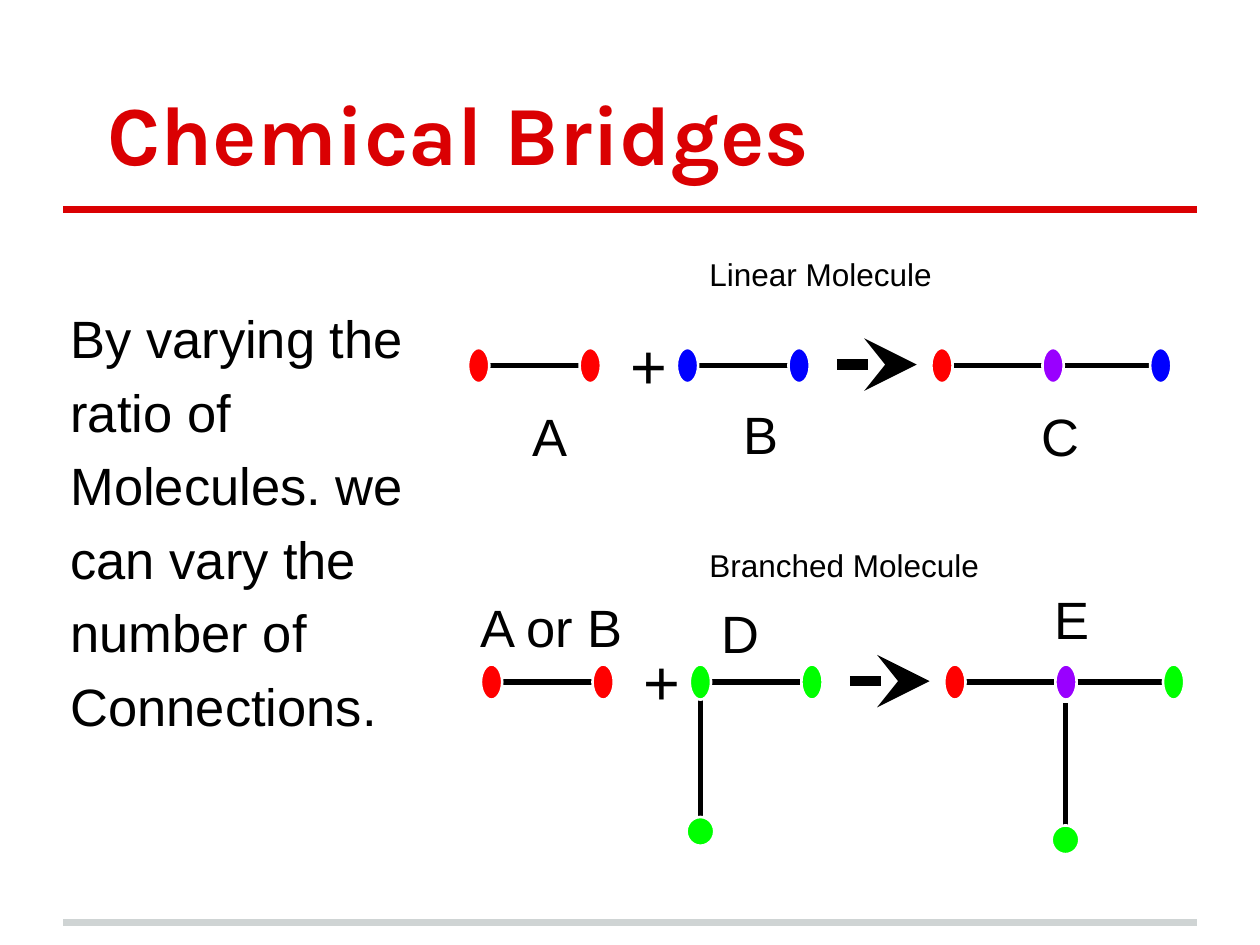
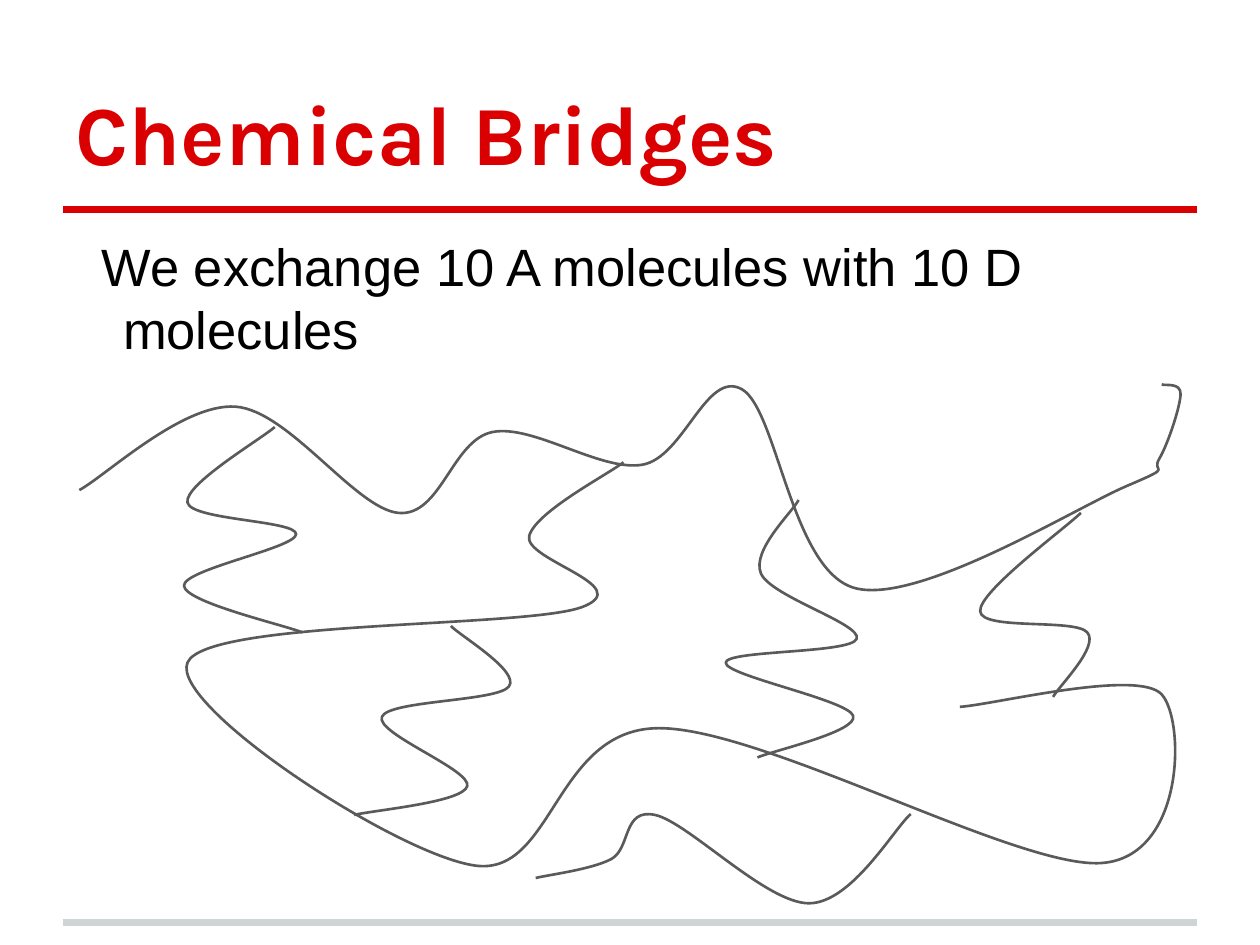
from itertools import pairwise

from lxml import etree
from pptx import Presentation
from pptx import util as u
from pptx.dml.color import RGBColor
from pptx.enum import shapes, text
from pptx.oxml.ns import qn

Cm, Pt = u.Cm, u.Pt

COLORS = {
    "title": "DA0002", "footer": "CFD4D4", "ink": "000000", "strand": "5B595A",
    "white": "FFFFFF", "red": "FF0000", "blue": "0000FF", "green": "00FF00",
    "purple": "9900FF",
}
TITLE_FONT = {"name": "Karla", "size": Pt(48), "bold": True}
BODY_FONT = {"name": "Arial", "size": Pt(30), "bold": False}
CAPTION_FONT = BODY_FONT | {"size": Pt(18)}
PLUS_FONT = BODY_FONT | {"size": Pt(36)}
TITLE_FRAME = {"vertical_anchor": text.MSO_ANCHOR.BOTTOM}
TOP_FRAME = {"vertical_anchor": text.MSO_ANCHOR.TOP}
MIDDLE_FRAME = {"vertical_anchor": text.MSO_ANCHOR.MIDDLE}
LEFT = {"alignment": text.PP_ALIGN.LEFT}
CENTER = {"alignment": text.PP_ALIGN.CENTER}
BODY_PARAGRAPH = LEFT | {"line_spacing": 1.0, "space_before": Pt(6)}

TITLE_BOX = (1.27, 0.75, 22.86, 3.17)
LETTER_SIZE = (0.43, 1.07)
ATOM_SIZE = (0.43, 0.71)
BRANCH_ATOM_SIZE = (0.56, 0.58)
BOND_INSET = 0.1

STRANDS = [
    [(1.6, 9.88), (4.75, 8.2), (8.03, 10.34), (9.93, 8.71), (12.95, 9.37), (14.96, 7.85),
     (17.25, 11.86), (22.71, 9.8), (23.37, 9.25), (23.8, 7.95), (23.42, 7.75)],
    [(12.57, 9.32), (10.67, 10.8), (11.73, 12.24), (3.78, 13.36), (9.58, 17.45),
     (13.28, 14.68), (22.2, 17.4), (23.42, 14), (19.35, 14.25)],
    [(6.1, 12.75), (3.71, 11.81), (5.97, 10.77), (3.78, 10.13), (5.54, 8.61)],
    [(7.14, 16.43), (9.42, 15.85), (7.7, 14.45), (10.26, 13.84), (9.09, 12.62)],
    [(15.27, 15.27), (17.2, 14.43), (14.63, 13.36), (17.27, 12.88), (15.34, 11.56),
     (16.1, 10.08)],
    [(18.36, 16.41), (16.31, 18.21), (13.21, 16.43), (12.32, 17.32), (10.8, 17.7)],
    [(21.23, 14.05), (21.92, 12.75), (19.76, 12.32), (21.79, 10.34)],
]


def rgb(name):
    """Return the named colour."""
    return RGBColor.from_string(COLORS[name])


def apply(target, values):
    """Set each attribute in values on the target."""
    for name, value in values.items():
        setattr(target, name, value)


def place(shape, box):
    """Move and size a shape to a box in centimetres."""
    apply(shape, dict(zip(("left", "top", "width", "height"), map(Cm, box))))


def write(shape, lines, font, paragraph_format=LEFT, frame_format=TOP_FRAME, color="ink"):
    """Fill a shape with formatted paragraphs and return them."""
    frame = shape.text_frame
    margins = dict.fromkeys(
        ("margin_left", "margin_top", "margin_right", "margin_bottom"), Cm(0.25))
    apply(frame, margins | frame_format
          | {"word_wrap": True, "auto_size": text.MSO_AUTO_SIZE.NONE})
    frame.text = "\n".join(lines)
    for paragraph in frame.paragraphs:
        apply(paragraph, paragraph_format)
        for run in paragraph.runs:
            apply(run.font, font)
            run.font.color.rgb = rgb(color)
    return frame.paragraphs


def indent(paragraph, margin, first):
    """Set the left margin and first line indent and return the properties."""
    properties = paragraph._p.get_or_add_pPr()
    properties.set("marL", str(Cm(margin)))
    properties.set("indent", str(Cm(first)))
    return properties


def add_title(slide, title, first=0):
    """Fill the title placeholder."""
    place(slide.shapes.title, TITLE_BOX)
    for paragraph in write(slide.shapes.title, [title], TITLE_FONT, LEFT, TITLE_FRAME, "title"):
        indent(paragraph, 0, first)


def add_body(slide, lines, box):
    """Fill the body placeholder with unbulleted hanging paragraphs."""
    body = slide.placeholders[1]
    place(body, box)
    for paragraph in write(body, lines, BODY_FONT, BODY_PARAGRAPH):
        etree.SubElement(indent(paragraph, 0.96, -0.43), qn("a:buNone"))


def add_text(slide, words, box, font=BODY_FONT, paragraph_format=LEFT, frame_format=TOP_FRAME):
    """Add a text box."""
    write(slide.shapes.add_textbox(*map(Cm, box)), [words], font,
          paragraph_format, frame_format)


def add_line(slide, start, end, width=3, color="ink", arrow=False):
    """Add a straight line, with a large stealth head if arrow is set."""
    line = slide.shapes.add_connector(
        shapes.MSO_CONNECTOR.STRAIGHT, *map(Cm, start + end))
    line.line.width = Pt(width)
    line.line.color.rgb = rgb(color)
    if arrow:
        etree.SubElement(line.line._get_or_add_ln(), qn("a:tailEnd"),
                         type="stealth", w="lg", len="lg")
    etree.SubElement(line.element.spPr, qn("a:effectLst"))
    return line


def add_atom(slide, x, y, color, size=ATOM_SIZE):
    """Add an oval atom centred on a point."""
    width, height = size
    atom = slide.shapes.add_shape(
        shapes.MSO_SHAPE.OVAL,
        *map(Cm, (x - width / 2, y - height / 2, width, height)))
    atom.shadow.inherit = False
    atom.fill.solid()
    atom.fill.fore_color.rgb = rgb(color)
    atom.line.color.rgb = rgb("white")
    atom.line.width = Pt(1.5)


def add_molecule(slide, y, atoms):
    """Add a row of (x, colour) atoms joined by bonds."""
    for (left, _), (right, _) in pairwise(atoms):
        add_line(slide, (left + BOND_INSET, y), (right - BOND_INSET, y))
    for x, color in atoms:
        add_atom(slide, x, y, color)


def add_branch(slide, x, top, bottom):
    """Add a hanging bond with an atom at its end."""
    add_line(slide, (x, top), (x, bottom))
    add_atom(slide, x, bottom + 0.04, "green", BRANCH_ATOM_SIZE)


def add_reaction(slide, x, y, partner):
    """Add a red molecule plus a partner, an arrow and the product."""
    add_molecule(slide, y, [(x, "red"), (x + 2.25, "red")])
    add_text(slide, "+", (x + 2.88, y - 0.31, 0.43, 0.56), PLUS_FONT, CENTER, MIDDLE_FRAME)
    add_molecule(slide, y, [(x + 4.21, partner), (x + 6.46, partner)])
    add_line(slide, (x + 7.22, y - 0.02), (x + 8.83, y - 0.02), 6, arrow=True)
    add_molecule(slide, y, [(x + 9.34, "red"), (x + 11.58, "purple"), (x + 13.75, partner)])


def smooth(strand, points):
    """Replace the straight segments of a strand with Catmull-Rom curves."""
    path = next(strand.element.iter(qn("a:path")))
    for segment in path.findall(qn("a:lnTo")):
        path.remove(segment)
    local = [(x - strand.left, y - strand.top) for x, y in points]
    padded = [local[0], *local, local[-1]]
    for before, start, end, after in zip(padded, padded[1:], padded[2:], padded[3:]):
        leaving = [s + (e - b) / 6 for b, s, e in zip(before, start, end)]
        arriving = [e - (a - s) / 6 for s, e, a in zip(start, end, after)]
        curve = etree.SubElement(path, qn("a:cubicBezTo"))
        for x, y in (leaving, arriving, end):
            etree.SubElement(curve, qn("a:pt"), x=str(round(x)), y=str(round(y)))


def add_strand(slide, points):
    """Add an open smooth strand through the points."""
    points = [(Cm(x), Cm(y)) for x, y in points]
    builder = slide.shapes.build_freeform(*points[0])
    builder.add_line_segments(points[1:], close=False)
    strand = builder.convert_to_shape()
    smooth(strand, points)
    strand.shadow.inherit = False
    strand.fill.background()
    strand.line.color.rgb = rgb("strand")
    strand.line.width = Pt(1.5)


def add_rules(slide):
    """Draw the title and footer rules on the layout of a slide."""
    for y, color in ((18.59, "footer"), (4.23, "title")):
        rule = add_line(slide, (1.27, y), (24.13, y), 4, color)
        slide.slide_layout.shapes.element.append(rule.element)


def fill_bridges(slide):
    """Build the slide with the linear and branched reactions."""
    add_title(slide, "Chemical Bridges", 0.64)
    add_body(slide, ["By varying the", "ratio of", "Molecules. we", "can vary the",
                     "number of", "Connections."], (0.64, 5.92, 23.5, 12.32))
    add_branch(slide, 14.12, 14.02, 16.72)
    add_branch(slide, 21.48, 14.18, 16.89)
    add_reaction(slide, 9.65, 7.37, "blue")
    add_reaction(slide, 9.91, 13.75, "green")
    for letter, x, y in (("A", 10.55, 7.9), ("B", 14.81, 7.85), ("C", 20.81, 7.9),
                         ("D", 14.36, 11.86), ("E", 21.07, 11.58)):
        add_text(slide, letter, (x, y, *LETTER_SIZE))
    add_text(slide, "A or B", (9.43, 11.74, 7.37, 1.07))
    for caption, y in (("Linear Molecule", 4.89), ("Branched Molecule", 10.75)):
        add_text(slide, caption, (14.05, y, 6.15, 1.3), CAPTION_FONT)


def fill_network(slide):
    """Build the slide with the linked strands."""
    add_title(slide, "Chemical Bridges")
    add_body(slide, ["We exchange 10 A molecules with 10 D molecules"],
             (1.27, 4.47, 22.86, 13.79))
    for points in STRANDS:
        add_strand(slide, points)


def main():
    """Build and save the presentation."""
    presentation = Presentation()
    apply(presentation, {"slide_width": Cm(25.4), "slide_height": Cm(19.05)})
    layout = presentation.slide_layouts[1]
    bridges, network = (presentation.slides.add_slide(layout) for _ in range(2))
    add_rules(bridges)
    fill_bridges(bridges)
    fill_network(network)
    presentation.save("out.pptx")


if __name__ == "__main__":
    main()
